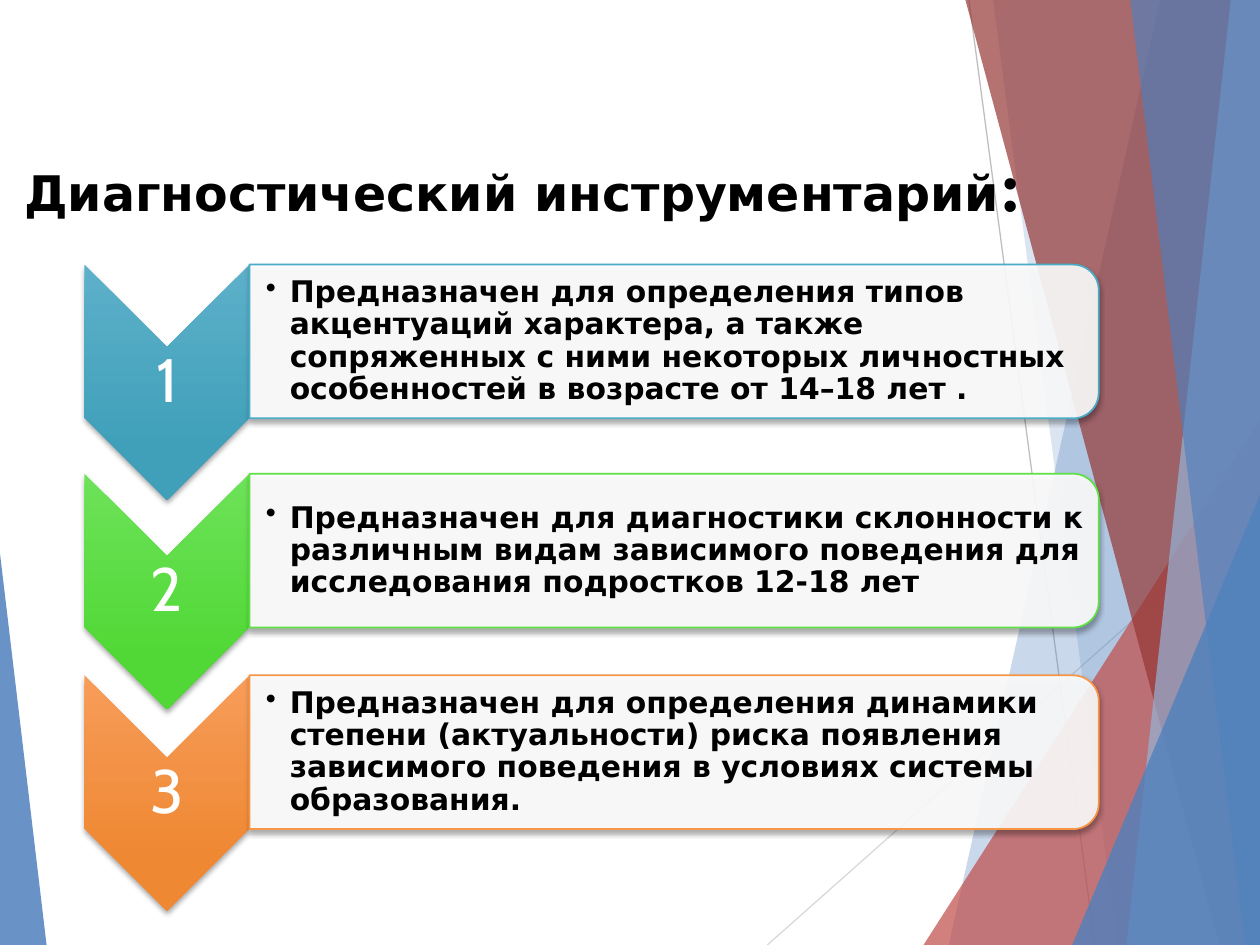
"""Builds a slide that lists three diagnostic tools as numbered chevrons."""
from dataclasses import dataclass

from lxml import etree
from pptx import Presentation
from pptx import util as u
from pptx.dml.color import RGBColor
from pptx.enum import shapes, text
from pptx.oxml import ns

KIND = shapes.MSO_SHAPE


@dataclass(frozen=True)
class Theme:
    blue: str = "4F81BD"
    pale_blue: str = "95B3D7"
    red: str = "C0504D"
    dark_red: str = "953735"
    ink: str = "000000"
    paper: str = "FFFFFF"
    sans: str = "DejaVu Sans"
    serif: str = "Times New Roman"
    numeral: str = "Cabin"
    title_size: int = 28
    number_size: int = 35
    body_size: int = 17


def add_xml(parent, tag, **attributes):
    child = etree.SubElement(parent, ns.qn(tag))
    for name, value in attributes.items():
        child.set(name, str(value))
    return child


class SlideBuilder:
    def __init__(self, slide, theme):
        self.slide, self.theme = slide, theme

    def paint(self, shape, color, opacity):
        shape.shadow.inherit = False
        shape.fill.solid()
        shape.fill.fore_color.rgb = RGBColor.from_string(color)
        shape.line.fill.background()
        tint = shape._element.spPr.find(ns.qn("a:solidFill"))[0]
        add_xml(tint, "a:alpha", val=opacity * 1000)

    def cast_shadow(self, shape):
        shape.shadow.inherit = False
        effects = shape._element.spPr.find(ns.qn("a:effectLst"))
        shadow = add_xml(effects, "a:outerShdw", blurRad=u.Pt(3), dist=u.Pt(2),
                         dir=5400000, rotWithShape=0)
        tint = add_xml(shadow, "a:srgbClr", val=self.theme.ink)
        add_xml(tint, "a:alpha", val=35000)

    def hairline(self, start, end, color):
        line = self.slide.shapes.add_connector(
            shapes.MSO_CONNECTOR.STRAIGHT, *map(u.Inches, start + end))
        line.line.color.rgb = RGBColor.from_string(color)
        line.line.width = u.Pt(0.75)
        add_xml(line._element.spPr, "a:effectLst")

    def ribbon(self, top_left, bottom_left, color, opacity):
        """Fills from a slanted left edge to the right side of the slide."""
        top, bottom, right = -0.01, 7.5, 10
        outline = self.slide.shapes.build_freeform(
            u.Inches(top_left), u.Inches(top), scale=1.0)
        corners = [(right, top), (right, bottom), (bottom_left, bottom)]
        outline.add_line_segments(
            [(u.Inches(x), u.Inches(y)) for x, y in corners], close=True)
        self.paint(outline.convert_to_shape(), color, opacity)

    def wedge(self, left, top, width, apex, color, opacity):
        wedge = self.slide.shapes.add_shape(
            KIND.ISOSCELES_TRIANGLE, *map(u.Inches, (left, top, width, 7.5 - top)))
        wedge.adjustments[0] = apex
        self.paint(wedge, color, opacity)

    def turned(self, kind, left, top, width, height):
        """Adds a quarter-turned shape that covers the given area."""
        x, y = left + (width - height) / 2, top + (height - width) / 2
        shape = self.slide.shapes.add_shape(
            kind, *map(u.Inches, (x, y, height, width)))
        shape.rotation = 90
        return shape

    def chevron(self, left, top, width, height, colors):
        chevron = self.turned(KIND.CHEVRON, left, top, width, height)
        chevron.fill.gradient()
        chevron.fill.gradient_angle = 270
        for stop, color, position in zip(chevron.fill.gradient_stops, colors, (0, 0.78)):
            stop.color.rgb = RGBColor.from_string(color)
            stop.position = position
        chevron._element.spPr.find(ns.qn("a:gradFill")).set("rotWithShape", "0")
        chevron.line.fill.background()
        self.cast_shadow(chevron)

    def panel(self, left, top, width, height, color):
        panel = self.turned(KIND.ROUND_2_SAME_RECTANGLE, left, top, width, height)
        self.paint(panel, self.theme.paper, 90)
        panel.line.color.rgb = RGBColor.from_string(color)
        panel.line.width = u.Pt(1)
        self.cast_shadow(panel)

    def run(self, paragraph, words, font, size, color, bold=True):
        run = paragraph.add_run()
        run.text = words
        run.font.name, run.font.size, run.font.bold = font, u.Pt(size), bold
        run.font.color.rgb = RGBColor.from_string(color)

    def text_area(self, left, top, width, height, inset, left_inset):
        frame = self.slide.shapes.add_textbox(
            *map(u.Inches, (left, top, width, height))).text_frame
        frame.word_wrap = True
        frame.vertical_anchor = text.MSO_ANCHOR.MIDDLE
        frame.margin_top = frame.margin_right = frame.margin_bottom = u.Inches(inset)
        frame.margin_left = u.Inches(left_inset)
        frame.paragraphs[0].line_spacing = 0.9
        return frame.paragraphs[0]

    def number(self, left, top, width, height, digit):
        paragraph = self.text_area(left, top, width, height, 0.02, 0.02)
        paragraph.alignment = text.PP_ALIGN.CENTER
        self.run(paragraph, digit, self.theme.numeral, self.theme.number_size,
                 self.theme.paper, bold=False)

    def bullet(self, left, top, width, height, words):
        paragraph = self.text_area(left, top, width, height, 0.01, 0.13)
        paragraph.level = 1
        properties = paragraph._p.get_or_add_pPr()
        properties.set("marL", str(u.Inches(0.19)))
        properties.set("indent", str(u.Inches(-0.19)))
        add_xml(properties, "a:buChar", char="•")
        self.run(paragraph, words, self.theme.sans, self.theme.body_size, self.theme.ink)

    def title(self, words):
        heading = self.slide.shapes.title
        self.slide.shapes._spTree.append(heading._element)
        heading.left, heading.top, heading.width, heading.height = map(
            u.Inches, (0, 0.99, 8.5, 1.43))
        frame = heading.text_frame
        frame.word_wrap = True
        frame.auto_size = text.MSO_AUTO_SIZE.NONE
        frame.vertical_anchor = text.MSO_ANCHOR.TOP
        frame.margin_top = u.Inches(0.13)
        line = frame.paragraphs[0]
        line.alignment = text.PP_ALIGN.LEFT
        look = self.theme
        self.run(line, " ", look.serif, 27, look.blue)
        self.run(line, words, look.sans, look.title_size, look.ink)
        self.run(line, ":", look.serif, 40, look.ink)


TOOLS = [
    (2.1, "4BACC6", ("5DB0C9", "40A0BA"),
     "Предназначен для определения типов акцентуаций характера, а также сопряженных "
     "с ними некоторых личностных особенностей в возрасте от 14–18 лет ."),
    (3.76, "60E146", ("6DE259", "51D836"),
     "Предназначен для диагностики склонности к различным видам зависимого поведения "
     "для исследования подростков 12-18 лет"),
    (5.36, "F79646", ("F79C59", "EF8833"),
     "Предназначен для определения динамики степени (актуальности) риска появления "
     "зависимого поведения в условиях системы образования."),
]


def main():
    deck = Presentation()
    deck.slide_width, deck.slide_height = u.Inches(10), u.Inches(7.5)
    theme = Theme()
    page = SlideBuilder(deck.slides.add_slide(deck.slide_layouts[5]), theme)

    page.hairline((7.69, 0), (8.69, 7.5), "BFBFBF")
    page.hairline((10, 4.03), (6.09, 7.5), "D9D9D9")
    page.ribbon(9.21, 7.53, theme.blue, 30)
    page.ribbon(7.88, 8.87, theme.blue, 20)
    page.wedge(7.33, 3.33, 2.67, 1, theme.red, 72)
    page.ribbon(7.66, 9.68, theme.dark_red, 70)
    page.ribbon(9.77, 8.94, theme.pale_blue, 70)
    page.ribbon(8.97, 9.88, theme.blue, 65)
    page.wedge(8.51, 3.93, 1.49, 1, theme.blue, 80)
    page.wedge(0, 4.39, 0.37, 0, theme.blue, 85)

    page.title("Диагностический инструментарий")
    for position, (top, border, gradient, purpose) in enumerate(TOOLS, start=1):
        page.chevron(0.67, top, 1.31, 1.87, gradient)
        page.number(0.67, top + 0.66, 1.31, 0.56, str(position))
        page.panel(1.98, top, 6.74, 1.22, border)
        page.bullet(1.98, top + 0.06, 6.69, 1.1, purpose)
    deck.save("out.pptx")


if __name__ == "__main__":
    main()
